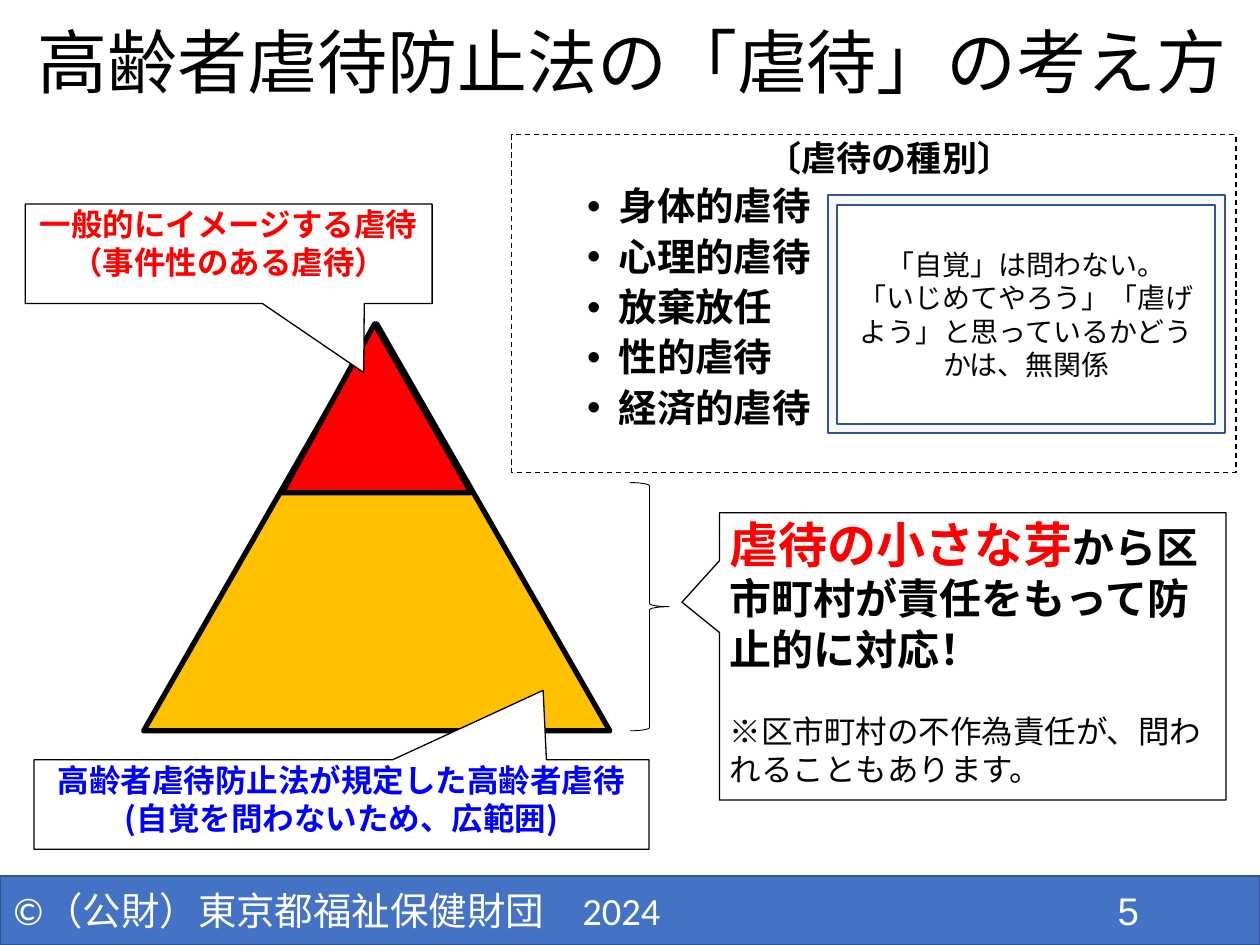
"""Build the slide on how the elder abuse prevention law views abuse."""
from collections import namedtuple
from dataclasses import dataclass

from lxml import etree
from pptx import Presentation
from pptx.dml.color import RGBColor
from pptx.enum import dml, shapes, text
from pptx.oxml import ns
from pptx import util as u

Box = namedtuple("Box", "x y w h")
SHAPE, ALIGN, ANCHOR = shapes.MSO_SHAPE, text.PP_ALIGN, text.MSO_ANCHOR


@dataclass(frozen=True)
class Theme:
    """Colours, fonts and type sizes of the slide."""
    black: str = "000000"
    white: str = "FFFFFF"
    red: str = "FF0000"
    blue: str = "0000FF"
    amber: str = "FFC000"
    bar: str = "4472C4"
    edge: str = "325491"
    pale: str = "EDEDED"
    cjk: str = "Noto Sans CJK JP"
    latin: str = "Calibri"
    digits: str = "Arial"
    title: int = 40
    key: int = 28
    lead: int = 24
    item: int = 22
    heading: int = 20
    label: int = 18
    aside: int = 16


T = Theme()


def part(box, x, y, w, h):
    """Return the box that lies at the given percentages of another box."""
    return Box(box.x + box.w * x / 100, box.y + box.h * y / 100,
               box.w * w / 100, box.h * h / 100)


def place(sp, box):
    """Move and size a shape to a box."""
    for name, value in zip(("left", "top", "width", "height"), box):
        setattr(sp, name, u.Emu(round(value)))


def xml_child(parent, tag, **attrs):
    """Append a DrawingML element with its attributes."""
    return etree.SubElement(parent, ns.qn(tag), attrs)


def outline(sp, color, width, dash=None):
    """Format the outline of a shape."""
    sp.line.color.rgb = RGBColor.from_string(color)
    sp.line.width = u.Pt(width)
    if dash:
        sp.line.dash_style = dash


def draw(s, kind, box, fill, line, width, adj=()):
    """Add a preset shape without shadow."""
    sp = s.shapes.add_shape(kind, *(u.Emu(round(v)) for v in box))
    sp.shadow.inherit = False
    for i, value in enumerate(adj):
        sp.adjustments[i] = value
    if fill:
        sp.fill.solid()
        sp.fill.fore_color.rgb = RGBColor.from_string(fill)
    else:
        sp.fill.background()
    outline(sp, line, width)
    return sp


def add_run(p, words, size, color=T.black, font=T.cjk, bold=False):
    """Add a formatted run to a paragraph."""
    r = p.add_run()
    r.text = words
    for name, value in dict(size=u.Pt(size), name=font, bold=bold).items():
        setattr(r.font, name, value)
    r.font.color.rgb = RGBColor.from_string(color)
    xml_child(r._r.get_or_add_rPr(), "a:ea", typeface=T.cjk)


def frame_text(sp, anchor=ANCHOR.TOP, inset=(0.1, 0.05)):
    """Prepare the text frame of a shape and return it."""
    tf = sp.text_frame
    across, down = map(u.Inches, inset)
    settings = dict(word_wrap=True, auto_size=text.MSO_AUTO_SIZE.NONE,
                    vertical_anchor=anchor, margin_left=across,
                    margin_right=across, margin_top=down, margin_bottom=down)
    for name, value in settings.items():
        setattr(tf, name, value)
    return tf


def write(tf, paragraphs, **fmt):
    """Fill a text frame with paragraphs, each a list of run settings."""
    result = []
    for i, runs in enumerate(paragraphs):
        p = tf.add_paragraph() if i else tf.paragraphs[0]
        for name, value in fmt.items():
            setattr(p, name, value)
        for run in runs:
            add_run(p, **run)
        result.append(p)
    return result


def footer(s, box):
    """Draw the copyright bar with the page number."""
    sp = draw(s, SHAPE.RECTANGLE, box, T.bar, T.edge, 1)
    style = dict(size=T.item, color=T.white)
    write(frame_text(sp, ANCHOR.MIDDLE),
          [[dict(words="©（公財）東京都福祉保健財団　2024　", font=T.latin, **style)]],
          alignment=ALIGN.LEFT)
    number = s.shapes.add_textbox(0, 0, 0, 0)
    place(number, part(box, 78.3, 7.27, 22.5, 72.73))
    write(frame_text(number), [[dict(words="5", font=T.digits, **style)]],
          alignment=ALIGN.CENTER)


def title(s, box):
    """Fill the title placeholder."""
    sp = s.shapes.title
    place(sp, box)
    write(frame_text(sp, ANCHOR.MIDDLE),
          [[dict(words="高齢者虐待防止法の「虐待」の考え方", size=T.title)]],
          alignment=ALIGN.LEFT, line_spacing=0.9)


def pyramid(s, box):
    """Draw the wide base triangle and its tip."""
    draw(s, SHAPE.ISOSCELES_TRIANGLE, box, T.amber, T.black, 3)
    draw(s, SHAPE.ISOSCELES_TRIANGLE, part(box, 29.73, 0, 40.54, 41.49),
         T.red, T.black, 3, [0.489])


def kinds(s, box):
    """Fill the body placeholder with the kinds of abuse."""
    sp = s.placeholders[1]
    place(sp, box)
    outline(sp, T.black, 0.75, dml.MSO_LINE.DASH)
    items = ["身体的虐待", "心理的虐待", "放棄放任", "性的虐待", "経済的虐待"]
    rows = [("〔虐待の種別〕", T.heading)] + [(item, T.item) for item in items]
    ps = write(frame_text(sp),
               [[dict(words=words, size=size, bold=True)] for words, size in rows],
               level=1, line_spacing=0.9, alignment=ALIGN.LEFT)
    for i, p in enumerate(ps):
        p.space_before = u.Pt(5 if i else 0)
        pPr = p._p.get_or_add_pPr()
        left, hang = (0.75, -0.25) if i else (0.25, 0)
        pPr.set("marL", str(u.Inches(left)))
        pPr.set("indent", str(u.Inches(hang)))
        if i:
            xml_child(pPr, "a:buFont", typeface=T.digits)
            xml_child(pPr, "a:buChar", char="•")
        else:
            xml_child(pPr, "a:buNone")
    ps[0].alignment = ALIGN.CENTER


def awareness(s, box):
    """Draw the framed remark on awareness."""
    sp = draw(s, SHAPE.FRAME, box, T.pale, T.edge, 1, [0.04])
    color = sp._element.spPr.find(ns.qn("a:solidFill"))[0]
    xml_child(color, "a:alpha", val="40000")
    lines = ["「自覚」は問わない。", "「いじめてやろう」「虐げよう」と思っているかどうかは、無関係"]
    write(frame_text(sp, ANCHOR.MIDDLE),
          [[dict(words=line, size=T.aside, font=T.latin)] for line in lines],
          alignment=ALIGN.CENTER)


def callout(s, box, tip, paragraphs, align=ALIGN.CENTER):
    """Draw a speech box whose tip points at the pyramid."""
    sp = draw(s, SHAPE.RECTANGULAR_CALLOUT, box, T.white, T.black, 0.75, tip)
    return write(frame_text(sp, inset=(0.08, 0.01)), paragraphs, alignment=align)


def main():
    """Build and save the slide."""
    prs = Presentation()
    prs.slide_width, prs.slide_height = u.Inches(10), u.Inches(7.5)
    page = Box(0, 0, prs.slide_width, prs.slide_height)
    s = prs.slides.add_slide(prs.slide_layouts[1])
    footer(s, part(page, 0, 92.67, 100, 7.33))
    title(s, part(page, 2, 1.73, 106.5, 10.53))
    pyramid(s, part(page, 11.4, 34.27, 37, 43.07))
    types_box = part(page, 40.6, 14.27, 57.5, 35.73)
    kinds(s, types_box)
    label = dict(size=T.label, bold=True)
    callout(s, part(page, 2, 21.6, 32.3, 10.53), (0.332, 1.193),
            [[dict(words=words, color=T.red, **label)]
             for words in ("一般的にイメージする虐待", "（事件性のある虐待）")])
    callout(s, part(page, 2.7, 80.4, 48.8, 9.47), (0.328, -1.276),
            [[dict(words="高齢者虐待防止法が規定した高齢者虐待(自覚を問わないため、広範囲)",
                   color=T.blue, **label)]])
    draw(s, SHAPE.RIGHT_BRACE, part(page, 50, 51.07, 3.1, 26.27), None, T.black, 0.5)
    duty = callout(
        s, part(page, 57.1, 54.27, 40.2, 30.4), (-0.574, -0.189),
        [[dict(words="虐待の小さな芽", size=T.key, color=T.red, bold=True),
          dict(words="から区市町村が責任をもって防止的に対応！", size=T.lead, bold=True)],
         [dict(words="※区市町村の不作為責任が、問われることもあります。", size=T.label)]],
        ALIGN.LEFT)
    duty[1].space_before = u.Pt(22)
    awareness(s, part(types_box, 43.65, 17.91, 54.78, 70.52))
    prs.save("out.pptx")


if __name__ == "__main__":
    main()
